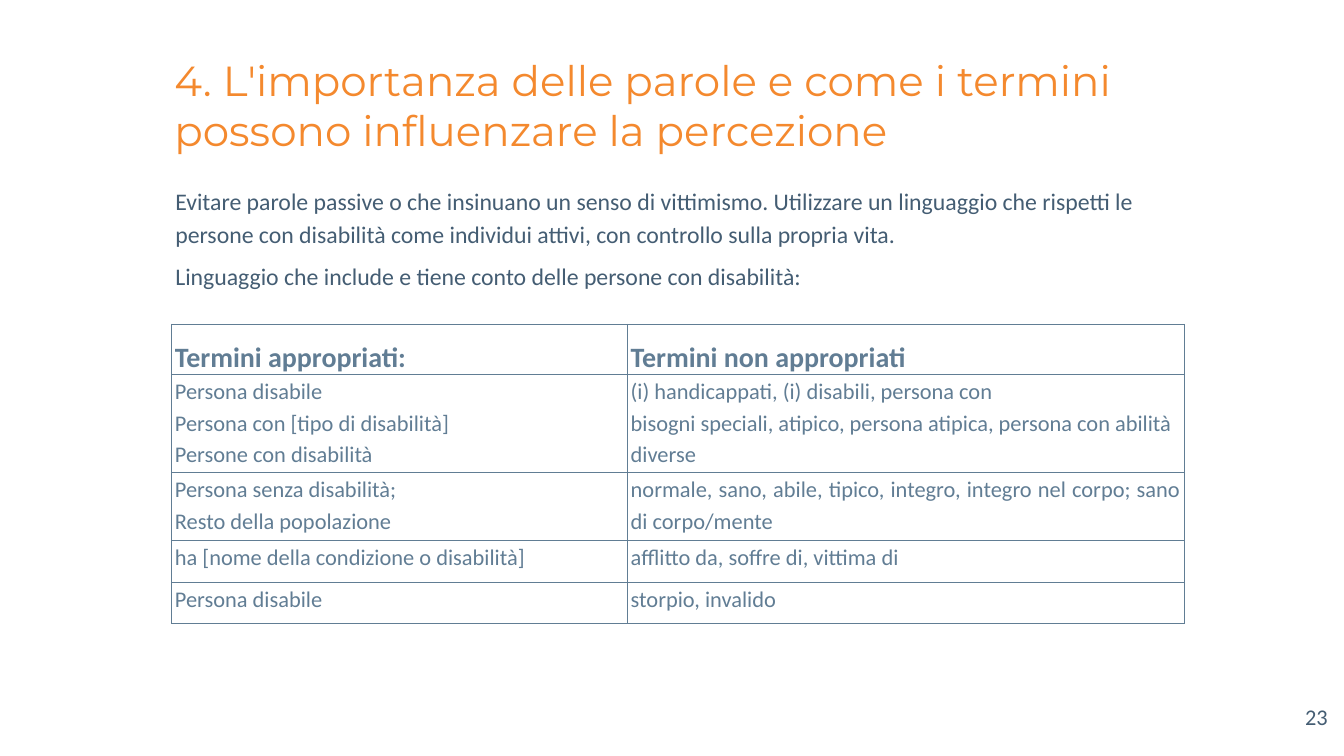
import pptx
import pptx.dml.color
import pptx.enum.text
import pptx.oxml
import pptx.oxml.ns
import pptx.util

RGBColor = pptx.dml.color.RGBColor
Inches = pptx.util.Inches
Pt = pptx.util.Pt
Align = pptx.enum.text.PP_ALIGN

ORANGE = RGBColor(0xF4, 0x89, 0x2E)
NAVY = RGBColor(0x44, 0x5D, 0x73)
STEEL = RGBColor(0x61, 0x7D, 0x94)

WIDE, HIGH = Inches(26.67), Inches(15)

TITLE = "4. L'importanza delle parole e come i termini possono influenzare la percezione"
BODY = [
    "Evitare parole passive o che insinuano un senso di vittimismo. Utilizzare un linguaggio "
    "che rispetti le persone con disabilità come individui attivi, con controllo sulla propria vita.",
    "Linguaggio che include e tiene conto delle persone con disabilità:",
]
LEFT, JUST = Align.LEFT, Align.JUSTIFY
TERMS = [
    [(JUST, ["Termini appropriati:"]), (JUST, ["Termini non appropriati"])],
    [(LEFT, ["Persona disabile", "Persona con [tipo di disabilità]", "Persone con disabilità"]),
     (LEFT, ["(i) handicappati, (i) disabili, persona con",
             "bisogni speciali, atipico, persona atipica, persona con abilità diverse"])],
    [(LEFT, ["Persona senza disabilità;", "Resto della popolazione"]),
     (JUST, ["normale, sano, abile, tipico, integro, integro nel corpo; sano di corpo/mente"])],
    [(JUST, ["ha [nome della condizione o disabilità]"]), (JUST, ["afflitto da, soffre di, vittima di"])],
    [(JUST, ["Persona disabile"]), (JUST, ["storpio, invalido"])],
]
COLS = [45, 55]
ROWS = [16, 33, 23, 14, 14]


def share(x, y, w, h):
    return [int(WIDE * x / 100), int(HIGH * y / 100), int(WIDE * w / 100), int(HIGH * h / 100)]


def write(frame, lines, size, color, face="Calibri", bold=False, align=LEFT, pitch=1.0, gap=0):
    frame.word_wrap = True
    frame.text = "\n".join(lines)
    for i, para in enumerate(frame.paragraphs):
        para.alignment = align
        para.line_spacing = pitch
        para.space_before = Pt(gap if i else 0)
        for run in para.runs:
            run.font.name = face
            run.font.size = Pt(size)
            run.font.bold = bold
            run.font.color.rgb = color


def add_text(slide, box, lines, size, color, side=0.06, edge=0.06, **look):
    frame = slide.shapes.add_textbox(*box).text_frame
    frame.margin_left = frame.margin_right = Inches(side)
    frame.margin_top = frame.margin_bottom = Inches(edge)
    write(frame, lines, size, color, **look)


def add_title(slide, box):
    add_text(slide, box, [TITLE], 60, ORANGE, face="Montserrat")


def add_body(slide, box):
    add_text(slide, box, BODY, 34, NAVY, pitch=1.15, gap=12)


def add_page(slide, box):
    add_text(slide, box, ["23"], 32, NAVY, side=0.2, edge=0.1, align=Align.RIGHT)


def rule(cell):
    props = cell._tc.get_or_add_tcPr()
    for i, side in enumerate("LRTB"):
        props.insert(i, pptx.oxml.parse_xml(
            f'<a:ln{side} {pptx.oxml.ns.nsdecls("a")} w="{Pt(1)}"><a:solidFill>'
            f'<a:srgbClr val="{STEEL}"/></a:solidFill></a:ln{side}>'))


def add_terms(slide, box):
    table = slide.shapes.add_table(len(ROWS), len(COLS), *box).table
    table.first_row = table.horz_banding = False
    for col, part in zip(table.columns, COLS):
        col.width = int(box[2] * part / sum(COLS))
    for row, part in zip(table.rows, ROWS):
        row.height = int(box[3] * part / sum(ROWS))
    for r, line in enumerate(TERMS):
        head = r == 0
        for c, (align, lines) in enumerate(line):
            cell = table.cell(r, c)
            cell.margin_left = cell.margin_right = Inches(0.07)
            cell.margin_top = cell.margin_bottom = 0
            cell.fill.background()
            rule(cell)
            write(cell.text_frame, lines, 40 if head else 32, STEEL, bold=head,
                  align=align, pitch=1.5 if head else 1.15)


def main():
    deck = pptx.Presentation()
    deck.slide_width, deck.slide_height = WIDE, HIGH
    slide = deck.slides.add_slide(deck.slide_layouts[6])
    add_title(slide, share(12.75, 6.8, 80, 11.13))
    add_body(slide, share(12.82, 23.8, 75.14, 13.27))
    add_terms(slide, share(12.75, 42.87, 75.37, 39.2))
    add_page(slide, share(93.55, 92.33, 6, 7.67))
    deck.save("out.pptx")


if __name__ == "__main__":
    main()
